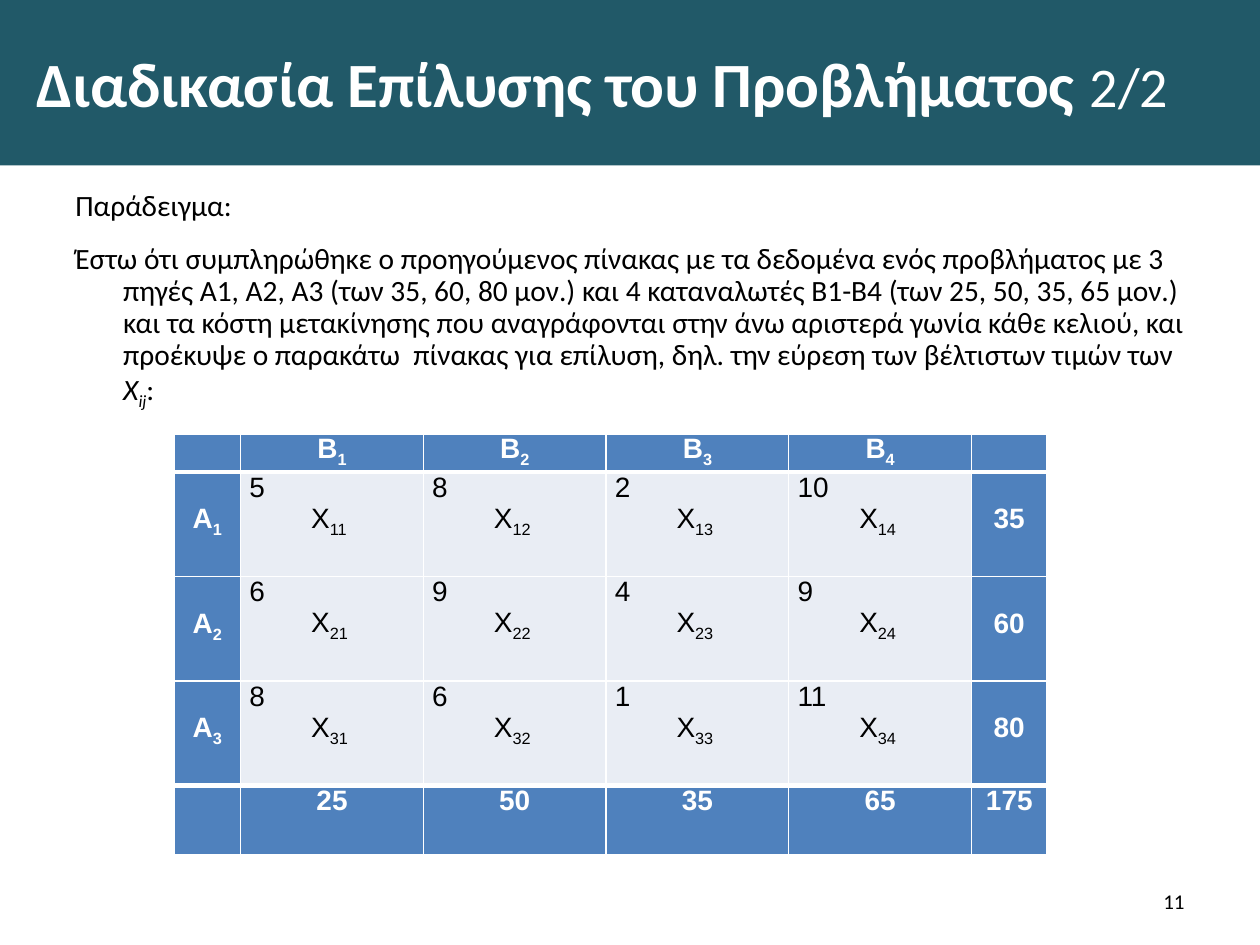
import pptx
import pptx.util
import pptx.dml.color
import pptx.enum.shapes
import pptx.enum.text
import pptx.oxml
import pptx.oxml.ns
import lxml.etree

RGB = pptx.dml.color.RGBColor
TEAL = RGB(0x21, 0x59, 0x68)
BLUE = RGB(0x4F, 0x81, 0xBD)
PALE = RGB(0xE9, 0xED, 0xF4)
WHITE = RGB(255, 255, 255)
BLACK = RGB(0, 0, 0)
ALIGN = pptx.enum.text.PP_ALIGN
ANCHOR = pptx.enum.text.MSO_ANCHOR
Inches, Pt = pptx.util.Inches, pptx.util.Pt
WIDE, HIGH = Inches(10), Inches(7.5)

COLS = [0.53, 1.45, 1.45, 1.45, 1.45, 0.6]
ROWS = [0.28, 0.83, 0.83, 0.83, 0.55]
COSTS = [[5, 8, 2, 10], [6, 9, 4, 9], [8, 6, 1, 11]]
STOCK = [35, 60, 80]
NEEDS = [25, 50, 35, 65]
LINE = 0.25
SUB = {"base": -25}
STORY = (
    "Έστω ότι συμπληρώθηκε ο προηγούμενος πίνακας με τα δεδομένα ενός "
    "προβλήματος με 3 πηγές Α1, Α2, Α3 (των 35, 60, 80 μον.) και 4 "
    "καταναλωτές Β1-Β4 (των 25, 50, 35, 65 μον.) και τα κόστη μετακίνησης "
    "που αναγράφονται στην άνω αριστερά γωνία κάθε κελιού, και προέκυψε ο "
    "παρακάτω  πίνακας για επίλυση, δηλ. την εύρεση των βέλτιστων τιμών των "
)


def share(x, y, w, h):
    """Turn shares of the slide into a box of lengths."""
    return int(x * WIDE), int(y * HIGH), int(w * WIDE), int(h * HIGH)


def write(frame, paras, size=16, color=BLACK, face="Calibri", bold=False,
          align=ALIGN.LEFT, left=0, hang=0, lead=None, gap=0):
    """Fill a text frame with paragraphs, each a list of (text, format) runs."""
    frame.word_wrap = True
    for num, runs in enumerate(paras):
        para = frame.add_paragraph() if num else frame.paragraphs[0]
        para.alignment = align
        para.line_spacing = lead
        if num and gap:
            para.space_before = Pt(gap)
        props = para._p.get_or_add_pPr()
        props.set("marL", str(Inches(left)))
        props.set("indent", str(Inches(hang)))
        for text, form in runs:
            run = para.add_run()
            run.text = text
            font = run.font
            font.name = face
            font.size = Pt(form.get("size", size))
            font.bold = form.get("bold", bold)
            font.italic = form.get("italic", False)
            font.color.rgb = color
            if "base" in form:
                run._r.get_or_add_rPr().set("baseline", str(form["base"] * 1000))
        if not runs:
            end = lxml.etree.SubElement(para._p, pptx.oxml.ns.qn("a:endParaRPr"))
            end.set("sz", str(size * 100))


def banner(slide, box):
    """Draw the title band."""
    band = slide.shapes.add_shape(pptx.enum.shapes.MSO_SHAPE.RECTANGLE, *box)
    band.shadow.inherit = False
    band.fill.solid()
    band.fill.fore_color.rgb = TEAL
    band.line.fill.background()
    band.text_frame.vertical_anchor = ANCHOR.MIDDLE
    title = [("Διαδικασία Επίλυσης του Προβλήματος ", {}),
             ("2/2", {"size": 32, "bold": False})]
    write(band.text_frame, [title], size=36, color=WHITE, bold=True, left=0.19)


def story(slide, box):
    """Place the worked example's text."""
    frame = slide.shapes.add_textbox(*box).text_frame
    tail = [("X", {"italic": True}), ("ij", {"italic": True, **SUB}), (":", {})]
    write(frame, [[("Παράδειγμα:", {})], [(STORY, {})] + tail],
          size=16.8, left=0.38, hang=-0.38, lead=0.9, gap=12)


def edge(cell, top, base):
    """Give a cell white borders."""
    props = cell._tc.get_or_add_tcPr()
    for side, wide in zip("LRTB", (1, 1, top, base)):
        line = lxml.etree.SubElement(props, pptx.oxml.ns.qn("a:ln" + side))
        line.set("w", str(Pt(wide)))
        fill = lxml.etree.SubElement(line, pptx.oxml.ns.qn("a:solidFill"))
        tint = lxml.etree.SubElement(fill, pptx.oxml.ns.qn("a:srgbClr"))
        tint.set("val", str(WHITE))


def label(row, col):
    """Return the runs of a cell on the table's rim."""
    last = len(ROWS) - 1
    end = len(COLS) - 1
    if row == 0:
        return [("Β", {}), (str(col), SUB)] if 0 < col < end else []
    if row == last:
        totals = [None, *NEEDS, sum(NEEDS)]
        return [(str(totals[col]), {})] if col else []
    if col == 0:
        return [("Α", {}), (str(row), SUB)]
    return [(str(STOCK[row - 1]), {})]


def matrix(slide, box):
    """Build the transport table."""
    last, end = len(ROWS) - 1, len(COLS) - 1
    table = slide.shapes.add_table(len(ROWS), len(COLS), *box).table
    table.first_row = table.horz_banding = False
    for col, part in enumerate(COLS):
        table.columns[col].width = int(box[2] * part / sum(COLS))
    for row, part in enumerate(ROWS):
        table.rows[row].height = int(box[3] * part / sum(ROWS))
        for col in range(len(COLS)):
            cell = table.cell(row, col)
            mid = 0 < row < last
            core = mid and 0 < col < end
            edge(cell, 3 if row in (1, last) else 1, 3 if row in (0, last - 1) else 1)
            cell.fill.solid()
            cell.fill.fore_color.rgb = PALE if core else BLUE
            cell.margin_left = cell.margin_right = Inches(0.07)
            cell.margin_top = Inches(LINE if mid and not core else 0)
            cell.margin_bottom = 0
            if core:
                cost = [(str(COSTS[row - 1][col - 1]), {})]
                name = [("X", {}), (f"{row}{col}", SUB)]
                write(cell.text_frame, [cost, name], face="Arial")
                cell.text_frame.paragraphs[1]._p.pPr.set("marL", str(Inches(0.49)))
            else:
                write(cell.text_frame, [label(row, col)], face="Arial",
                      color=WHITE, bold=True, align=ALIGN.CENTER)


def folio(slide, box):
    """Place the page number."""
    frame = slide.shapes.add_textbox(*box).text_frame
    frame.vertical_anchor = ANCHOR.MIDDLE
    write(frame, [[("11", {})]], size=12, align=ALIGN.RIGHT)


def main():
    """Build and save the slide."""
    deck = pptx.Presentation()
    deck.slide_width, deck.slide_height = WIDE, HIGH
    slide = deck.slides.add_slide(deck.slide_layouts[6])
    banner(slide, share(0, 0, 1, 0.175))
    story(slide, share(0.05, 0.196, 0.9, 0.24))
    matrix(slide, share(0.138, 0.459, 0.693, 0.442))
    folio(slide, share(0.717, 0.927, 0.233, 0.053))
    deck.save("out.pptx")


if __name__ == "__main__":
    main()
